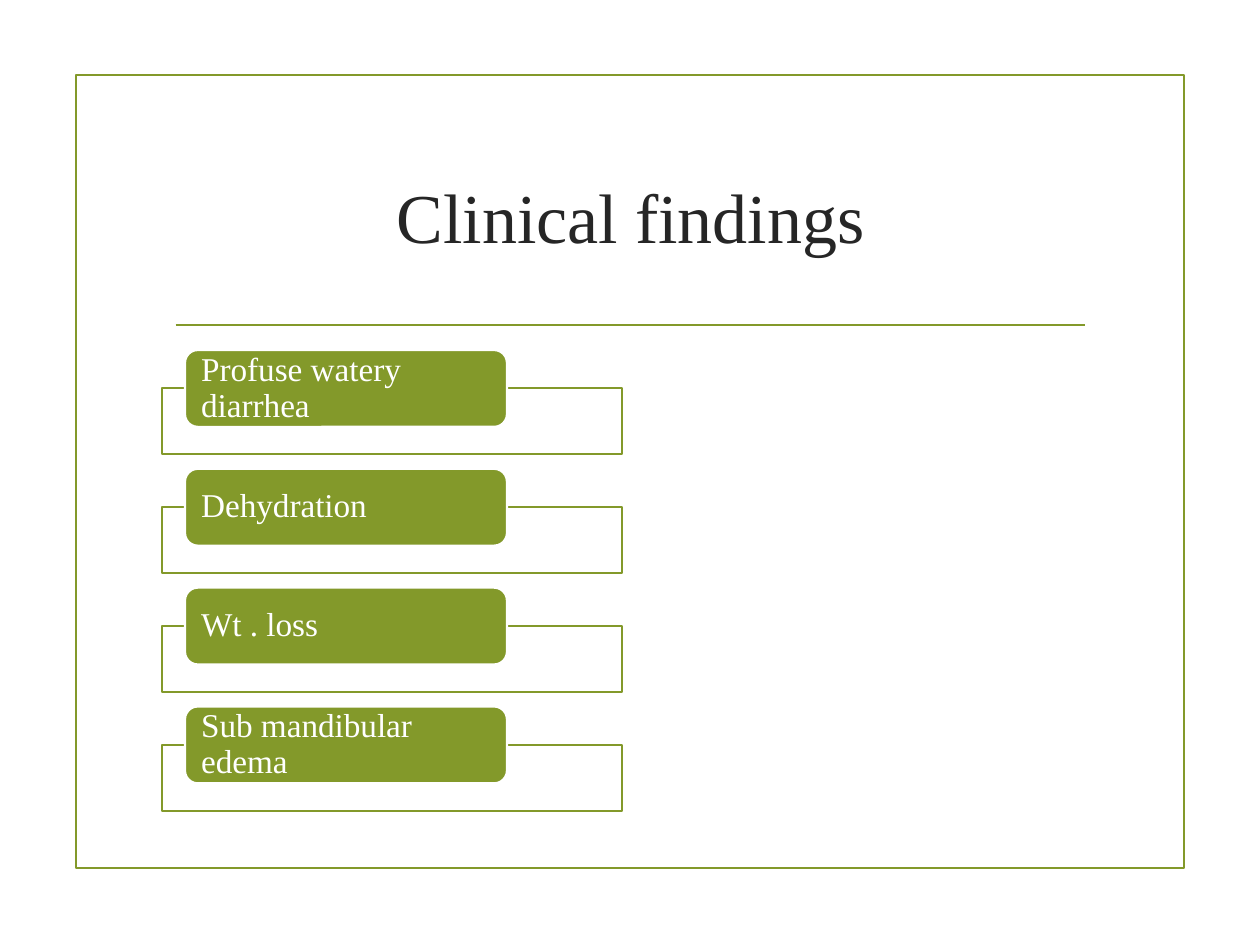
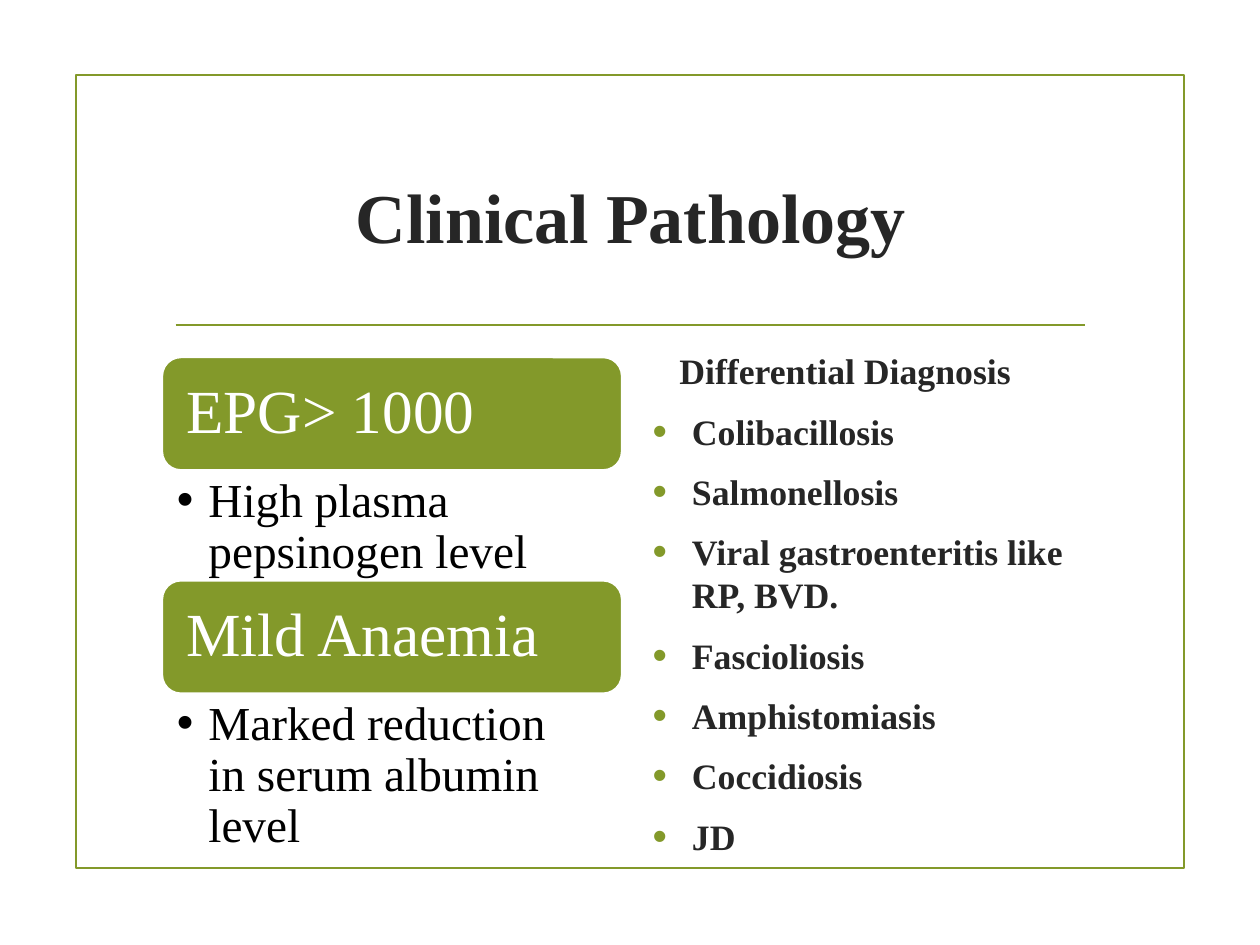
"""Build two slides on clinical findings and clinical pathology."""
from dataclasses import dataclass
from typing import Optional

from lxml.etree import SubElement
from pptx import Presentation
from pptx.dml.color import RGBColor
from pptx.enum.shapes import MSO_CONNECTOR, MSO_SHAPE
from pptx.enum.text import MSO_ANCHOR, PP_ALIGN
from pptx.oxml.ns import qn
from pptx.util import Pt

COLORS = {"green": "83992A", "white": "FFFFFF", "dark": "262626", "black": "000000"}
FONT = "Times New Roman"
LINE_WIDTH = 1.25
LEFT = 92.6
COLUMN_WIDTH = 262.8


@dataclass(frozen=True)
class Box:
    left: float
    top: float
    width: float
    height: float

    def lengths(self) -> tuple:
        return Pt(self.left), Pt(self.top), Pt(self.width), Pt(self.height)


@dataclass(frozen=True)
class TextStyle:
    size: float
    color: str
    bold: bool = False
    spacing: float = 1.0
    align: PP_ALIGN = PP_ALIGN.LEFT


@dataclass(frozen=True)
class Bullet:
    indent: float
    color: str
    percent: int = 100


@dataclass(frozen=True)
class Finding:
    heading: str
    detail: str


FRAME = Box(43.5, 42.7, 633, 453.5)
TITLE = Box(LEFT, 71.5, 535.7, 103)
RULE_Y = 185.6
RULE_LEFT, RULE_RIGHT = 100.4, 620.2

PILL_STYLE = TextStyle(19, "white", spacing=0.9)
HEADING_STYLE = TextStyle(35, "white", spacing=0.9)
DETAIL_STYLE = TextStyle(27, "black", spacing=0.9)
LIST_STYLE = TextStyle(20.4, "dark", bold=True)
DETAIL_BULLET = Bullet(18, "black")
LIST_BULLET = Bullet(22.5, "green", 115)

SIGNS = ["Profuse watery diarrhea", "Dehydration", "Wt . loss", "Sub mandibular edema"]
FINDINGS = [
    Finding("EPG> 1000", "High plasma pepsinogen level"),
    Finding("Mild Anaemia", "Marked reduction in serum albumin level"),
]
DIAGNOSES = [
    "Colibacillosis", "Salmonellosis", "Viral gastroenteritis like RP, BVD.",
    "Fascioliosis", "Amphistomiasis", "Coccidiosis", "JD",
]


def rgb(name: str) -> RGBColor:
    """Return a palette colour."""
    return RGBColor.from_string(COLORS[name])


def set_frame(tf, insets: tuple, anchor=MSO_ANCHOR.TOP) -> None:
    """Set wrapping, anchor and insets (left, top, right, bottom)."""
    tf.word_wrap = True
    tf.vertical_anchor = anchor
    tf.margin_left, tf.margin_top, tf.margin_right, tf.margin_bottom = map(Pt, insets)


def set_text(p, text: str, style: TextStyle) -> None:
    """Write a paragraph and format its runs."""
    p.text = text
    p.alignment = style.align
    p.line_spacing = style.spacing
    for r in p.runs:
        r.font.name = FONT
        r.font.size = Pt(style.size)
        r.font.bold = style.bold
        r.font.color.rgb = rgb(style.color)


def set_bullet(p, bullet: Bullet) -> None:
    """Give a paragraph a hanging bullet."""
    ppr = p._p.get_or_add_pPr()
    ppr.set("marL", str(Pt(bullet.indent)))
    ppr.set("indent", str(-Pt(bullet.indent)))
    color = SubElement(ppr, qn("a:buClr"))
    SubElement(color, qn("a:srgbClr"), val=COLORS[bullet.color])
    SubElement(ppr, qn("a:buSzPct"), val=str(bullet.percent * 1000))
    SubElement(ppr, qn("a:buFont"), typeface="Arial")
    SubElement(ppr, qn("a:buChar"), char="•")


def add_box(s, kind: MSO_SHAPE, box: Box, fill: Optional[str], line: str):
    """Add a flat preset shape."""
    sp = s.shapes.add_shape(kind, *box.lengths())
    sp.shadow.inherit = False
    if fill:
        sp.fill.solid()
        sp.fill.fore_color.rgb = rgb(fill)
    else:
        sp.fill.background()
    sp.line.color.rgb = rgb(line)
    sp.line.width = Pt(LINE_WIDTH)
    return sp


def add_label(s, box: Box, text: str, style: TextStyle, insets: tuple) -> None:
    """Add a green rounded label."""
    sp = add_box(s, MSO_SHAPE.ROUNDED_RECTANGLE, box, "green", "white")
    set_frame(sp.text_frame, insets, MSO_ANCHOR.MIDDLE)
    set_text(sp.text_frame.paragraphs[0], text, style)


def add_text_box(s, box: Box, insets: tuple, anchor=MSO_ANCHOR.TOP):
    """Add a text box and return its text frame."""
    tf = s.shapes.add_textbox(*box.lengths()).text_frame
    set_frame(tf, insets, anchor)
    return tf


def add_base_slide(prs, title: str, bold: bool = False):
    """Add a slide with the frame, the rule and a title."""
    s = prs.slides.add_slide(prs.slide_layouts[6])
    add_box(s, MSO_SHAPE.RECTANGLE, FRAME, None, "green")
    rule = s.shapes.add_connector(
        MSO_CONNECTOR.STRAIGHT, Pt(RULE_LEFT), Pt(RULE_Y), Pt(RULE_RIGHT), Pt(RULE_Y))
    rule.line.color.rgb = rgb("green")
    rule.line.width = Pt(LINE_WIDTH)
    SubElement(rule._element.spPr, qn("a:effectLst"))
    tf = add_text_box(s, TITLE, (7.2, 3.6, 7.2, 3.6), MSO_ANCHOR.MIDDLE)
    set_text(tf.paragraphs[0], title, TextStyle(40, "dark", bold, align=PP_ALIGN.CENTER))
    return s


def add_sign(s, top: float, text: str) -> None:
    """Add a label that overlaps the top edge of an open panel."""
    panel = Box(LEFT, top + 21.8, COLUMN_WIDTH, 37.8)
    sp = add_box(s, MSO_SHAPE.RECTANGLE, panel, "white", "green")
    color = sp._element.spPr.find(qn("a:solidFill"))[0]
    SubElement(color, qn("a:alpha"), val="90000")
    add_label(s, Box(105.7, top, 184, 43.9), text, PILL_STYLE, (7.2, 0, 7.2, 0))


def add_finding(s, top: float, finding: Finding) -> None:
    """Add a heading label with a bulleted detail below."""
    add_label(s, Box(LEFT, top, COLUMN_WIDTH, 64.6), finding.heading,
              HEADING_STYLE, (10.8,) * 4)
    tf = add_text_box(s, Box(LEFT, top + 64.6, COLUMN_WIDTH, 62.8), (8.5, 3.6, 19.4, 3.6))
    p = tf.paragraphs[0]
    set_bullet(p, DETAIL_BULLET)
    set_text(p, finding.detail, DETAIL_STYLE)


def add_diagnoses(s) -> None:
    """Add the list of differential diagnoses."""
    tf = add_text_box(s, Box(365.8, 196, COLUMN_WIDTH, 271.4), (7.2, 3.6, 7.2, 3.6))
    p = tf.paragraphs[0]
    p._p.get_or_add_pPr().set("marL", str(Pt(15.3)))
    set_text(p, "Differential Diagnosis", LIST_STYLE)
    p.space_after = Pt(6)
    for diagnosis in DIAGNOSES:
        p = tf.add_paragraph()
        set_bullet(p, LIST_BULLET)
        set_text(p, diagnosis, LIST_STYLE)
        p.space_before = Pt(4)
        p.space_after = Pt(6)


def main() -> None:
    """Build and save the slides."""
    prs = Presentation()
    prs.slide_width, prs.slide_height = Pt(720), Pt(540)

    s = add_base_slide(prs, "Clinical findings")
    for i, sign in enumerate(SIGNS):
        add_sign(s, 200 + i * 67.9, sign)

    s = add_base_slide(prs, "Clinical Pathology", bold=True)
    for i, finding in enumerate(FINDINGS):
        add_finding(s, 204.1 + i * 127.6, finding)
    add_diagnoses(s)

    prs.save("out.pptx")


if __name__ == "__main__":
    main()
